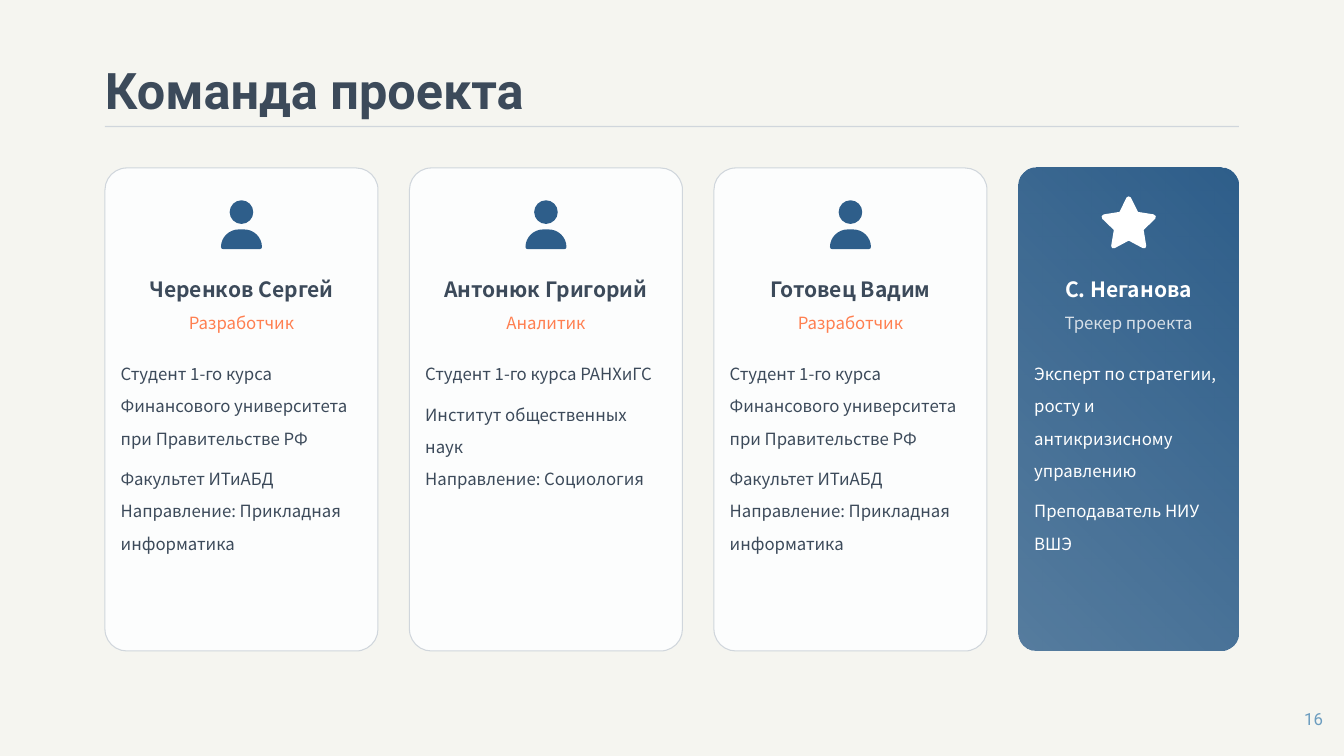
from lxml import etree
from pptx import Presentation
from pptx.dml.color import RGBColor
from pptx.enum.shapes import MSO_SHAPE
from pptx.enum.text import MSO_ANCHOR, PP_ALIGN
from pptx.oxml.ns import qn
from pptx.util import Pt

PX = 12700  # EMU per px, on a 1280 x 720 slide
RECT, ROUNDED = MSO_SHAPE.RECTANGLE, MSO_SHAPE.ROUNDED_RECTANGLE
TOP, MIDDLE = MSO_ANCHOR.TOP, MSO_ANCHOR.MIDDLE
LEFT, CENTER, RIGHT = PP_ALIGN.LEFT, PP_ALIGN.CENTER, PP_ALIGN.RIGHT

HEADING_FONT, BODY_FONT = "Roboto", "Noto Sans CJK SC"
COLORS = {
    "background": "F5F5F0",
    "ink": "3C4A5A",
    "border": "D0D6DC",
    "card": "FCFDFD",
    "blue": "2E5E8A",
    "coral": "FF7F50",
    "white": "FFFFFF",
    "page": "6B9CBF",
}

# Cards
MARGIN, CARD_TOP, CARD_HEIGHT = 100, 160, 460
MEMBER_WIDTH, TRACKER_WIDTH, GAP, PADDING = 260, 210, 30, 15
FINANCE_STUDENT = [
    "Студент 1-го курса Финансового университета при Правительстве РФ",
    "Факультет ИТиАБД",
    "Направление: Прикладная информатика",
]
MEMBERS = [
    ("Черенков Сергей", "Разработчик", FINANCE_STUDENT),
    ("Антонюк Григорий", "Аналитик", [
        "Студент 1-го курса РАНХиГС",
        "Институт общественных наук",
        "Направление: Социология",
    ]),
    ("Готовец Вадим", "Разработчик", FINANCE_STUDENT),
]
TRACKER = ("С. Неганова", "Трекер проекта", [
    "Эксперт по стратегии, росту и антикризисному управлению",
    "Преподаватель НИУ ВШЭ",
])

# Right halves of the icons, measured from the middle of the icon's top edge.
# After the start point, one point is a line and three points are a curve.
ICON_TOP, ICON_HEIGHT = 190, 48
HEAD = [[(0, 0.75)],
        [(6.2, 0.75), (11.25, 5.8), (11.25, 12)],
        [(11.25, 18.2), (6.2, 23.25), (0, 23.25)]]
SHOULDERS = [[(2.6, 28.5)],
             [(11.8, 28.5), (19.5, 36), (19.5, 45.3)],
             [(19.5, 46.4), (18.6, 47.3), (17.4, 47.3)]]
STAR = [[(0, -3)],
        [(0.8, -3), (1.5, -2.6), (2, -2)],
        [(8.8, 11.8)],
        [(23.8, 14.2)],
        [(24.7, 14.3), (25.5, 15), (25.8, 15.9)],
        [(26.1, 16.8), (25.8, 17.8), (25.2, 18.4)],
        [(14.2, 29)],
        [(16.7, 44.2)],
        [(16.9, 45), (16.5, 45.8), (15.8, 46.3)],
        [(15.2, 46.8), (14.3, 46.8), (13.5, 46.4)],
        [(0, 39.2)]]


def rgb(name):
    return RGBColor.from_string(COLORS[name])


def set_alpha(fill_xml, percent):
    """Make the last colour inside a fill partly transparent."""
    color = list(fill_xml.iter(qn("a:srgbClr")))[-1]
    etree.SubElement(color, qn("a:alpha")).set("val", str(percent * 1000))


def add_text(slide, box, lines, size, color, font=BODY_FONT, bold=False,
             align=LEFT, anchor=MIDDLE, spacing=None, gap=0):
    """Add a text box; gap is the space before its second paragraph."""
    frame = slide.shapes.add_textbox(*(v * PX for v in box)).text_frame
    frame.word_wrap = True
    frame.vertical_anchor = anchor
    frame.margin_left = frame.margin_right = 0
    frame.margin_top = frame.margin_bottom = 0
    frame.text = "\n".join(lines)
    for index, paragraph in enumerate(frame.paragraphs):
        paragraph.alignment = align
        if spacing:
            paragraph.line_spacing = spacing
        if gap and index == 1:
            paragraph.space_before = Pt(gap)
        paragraph.font.name = font
        paragraph.font.size = Pt(size)
        paragraph.font.bold = bold
        paragraph.font.color.rgb = rgb(color)
    return frame


def add_panel(slide, kind, box, fill, line=None):
    panel = slide.shapes.add_shape(kind, *(v * PX for v in box))
    panel.shadow.inherit = False
    panel.fill.solid()
    panel.fill.fore_color.rgb = rgb(fill)
    if line:
        panel.line.color.rgb = rgb(line)
        panel.line.width = Pt(1)
    else:
        panel.line.fill.background()
    if kind == ROUNDED:
        panel.adjustments[0] = 0.08
    return panel


def mirrored(half):
    """Complete a right half with its reflection, drawn back to the start."""
    points = [segment[-1] for segment in half]
    outline = list(half)
    if points[-1][0]:
        outline.append([(-points[-1][0], points[-1][1])])
    for index in range(len(half) - 1, 0, -1):
        back = half[index][-2::-1] + [points[index - 1]]
        outline.append([(-x, y) for x, y in back])
    return outline


def add_icon(slide, center, width, halves, color):
    left, right = (center - width // 2) * PX, (center + width // 2) * PX
    top, bottom = ICON_TOP * PX, (ICON_TOP + ICON_HEIGHT) * PX
    builder = slide.shapes.build_freeform(left, top)
    builder.add_line_segments([(right, top), (right, bottom), (left, bottom)])
    icon = builder.convert_to_shape()
    icon.shadow.inherit = False
    icon.fill.solid()
    icon.fill.fore_color.rgb = rgb(color)
    icon.line.fill.background()

    # Draw the curved outline inside the icon's box
    outline = next(icon.element.iter(qn("a:path")))
    for child in list(outline):
        outline.remove(child)
    for half in halves:
        for index, segment in enumerate(mirrored(half)):
            tag = "a:cubicBezTo" if len(segment) == 3 else "a:lnTo"
            command = etree.SubElement(outline, qn(tag if index else "a:moveTo"))
            for x, y in segment:
                point = etree.SubElement(command, qn("a:pt"))
                point.set("x", str(round((x + width / 2) * PX)))
                point.set("y", str(round(y * PX)))
        etree.SubElement(outline, qn("a:close"))


def add_profile(slide, left, width, profile, name_color, role_color):
    name, role, details = profile
    x, w = left + PADDING, width - 2 * PADDING
    add_text(slide, (x, 260, w, 30), [name], 20, name_color, bold=True, align=CENTER)
    role_frame = add_text(slide, (x, 295, w, 24), [role], 16, role_color, align=CENTER)
    add_text(slide, (x, 335, w, 260), details, 16, name_color,
             anchor=TOP, spacing=1.6, gap=8)
    return role_frame


def add_member(slide, left, profile):
    add_panel(slide, ROUNDED, (left, CARD_TOP, MEMBER_WIDTH, CARD_HEIGHT),
              "card", "border")
    add_icon(slide, left + MEMBER_WIDTH // 2, 42, [HEAD, SHOULDERS], "blue")
    add_profile(slide, left, MEMBER_WIDTH, profile, "ink", "coral")


def add_tracker(slide, left):
    card = add_panel(slide, ROUNDED, (left, CARD_TOP, TRACKER_WIDTH, CARD_HEIGHT), "blue")
    card.fill.gradient()
    card.fill.gradient_angle = 225  # from top right to bottom left
    for stop, position in zip(card.fill.gradient_stops, (0, 1)):
        stop.color.rgb = rgb("blue")
        stop.position = position
    set_alpha(card.element.spPr.find(qn("a:gradFill")), 80)
    add_icon(slide, left + TRACKER_WIDTH // 2, 54, [STAR], "white")
    role = add_profile(slide, left, TRACKER_WIDTH, TRACKER, "white", "white")
    # Soften the role; its run colour carries the transparency
    run = role.paragraphs[0].runs[0]
    run.font.color.rgb = rgb("white")
    set_alpha(run.font.fill._xPr, 80)


def main():
    prs = Presentation()
    prs.slide_width, prs.slide_height = 1280 * PX, 720 * PX
    slide = prs.slides.add_slide(prs.slide_layouts[6])
    slide.background.fill.solid()
    slide.background.fill.fore_color.rgb = rgb("background")

    # Heading
    add_text(slide, (MARGIN, 60, 800, 50), ["Команда проекта"], 48, "ink",
             HEADING_FONT, bold=True)
    add_panel(slide, RECT, (MARGIN, 120, 1080, 1), "border")

    # Team
    pitch = MEMBER_WIDTH + GAP
    for index, member in enumerate(MEMBERS):
        add_member(slide, MARGIN + index * pitch, member)
    add_tracker(slide, MARGIN + len(MEMBERS) * pitch)

    # Page number
    add_text(slide, (1180, 670, 80, 30), ["16"], 16, "page", HEADING_FONT, align=RIGHT)
    prs.save("out.pptx")


if __name__ == "__main__":
    main()
